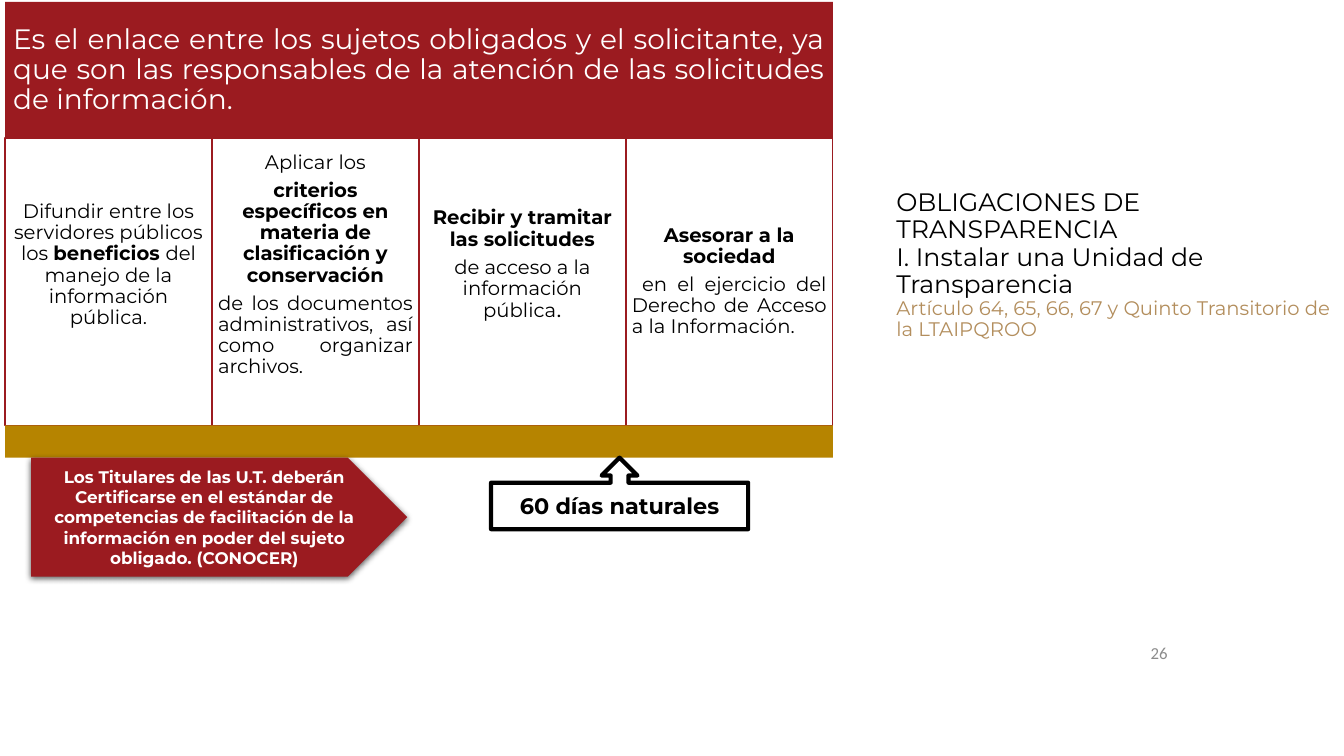
from lxml import etree
from pptx import Presentation
from pptx.dml.color import RGBColor
from pptx.enum.shapes import MSO_SHAPE as Kind
from pptx.enum.text import MSO_ANCHOR as Anchor, MSO_AUTO_SIZE as Fit, PP_ALIGN as Align
from pptx.oxml.ns import qn
from pptx.util import Inches, Pt

RED, GOLD, TAN = "9B1B20", "B68400", "B38E5D"
WHITE, BLACK, GRAY = "FFFFFF", "000000", "8C8C8C"
LEFT, WIDTH = 0.05, 8.21
MID, JUST = Align.CENTER, Align.JUSTIFY

DUTIES = [
    [(MID, [("Difundir entre los servidores públicos los ", {}),
            ("beneficios ", {"bold": True}),
            ("del manejo de la información pública.", {})])],
    [(MID, [("Aplicar los", {})]),
     (MID, [("criterios específicos en materia de clasificación y conservación",
             {"bold": True})]),
     (JUST, [("de los documentos administrativos, así como organizar archivos.", {})])],
    [(MID, [("Recibir y tramitar las solicitudes", {"bold": True})]),
     (MID, [("de acceso a la información pública", {}),
            (".", {"size": 15, "face": "Calibri"})])],
    [(MID, [("Asesorar a la sociedad", {"bold": True})]),
     (JUST, [(" en el ejercicio del Derecho de Acceso a la Información.", {})])],
]


def tint(color):
    return RGBColor.from_string(color)


def style(font, size=14, face="Montserrat", color=BLACK, bold=False):
    font.size, font.name, font.bold = Pt(size), face, bold
    font.color.rgb = tint(color)


def write(shape, paras, inset=(0.1, 0.05, 0.1, 0.05), lines=1.0, gap=0, **look):
    frame = shape.text_frame
    frame.auto_size = Fit.NONE
    frame.word_wrap = True
    frame.vertical_anchor = Anchor.MIDDLE
    (frame.margin_left, frame.margin_top,
     frame.margin_right, frame.margin_bottom) = map(Inches, inset)
    for i, (align, runs) in enumerate(paras):
        para = frame.add_paragraph() if i else frame.paragraphs[0]
        para.alignment, para.line_spacing = align, lines
        para.space_before = Pt(0)
        para.space_after = Pt(gap if i < len(paras) - 1 else 0)
        for text, extra in runs:
            for j, part in enumerate(text.split("\n")):
                if j:
                    para.add_line_break()
                if part:
                    run = para.add_run()
                    run.text = part
                    style(run.font, **{**look, **extra})


def block(slide, box, fill, kind=Kind.RECTANGLE, line=None, width=1):
    shape = slide.shapes.add_shape(kind, *map(Inches, box))
    shape.shadow.inherit = False
    shape.fill.solid()
    shape.fill.fore_color.rgb = tint(fill)
    if line:
        shape.line.color.rgb = tint(line)
        shape.line.width = Pt(width)
    else:
        shape.line.fill.background()
    return shape


def shade(shape):
    effect = shape._element.spPr.find(qn("a:effectLst"))
    outer = etree.SubElement(effect, qn("a:outerShdw"), blurRad=str(Pt(4.5)),
                             dist=str(Pt(1.5)), dir="5400000", rotWithShape="0")
    color = etree.SubElement(outer, qn("a:srgbClr"), val=BLACK)
    etree.SubElement(color, qn("a:alpha"), val="63000")


def head(slide):
    title = slide.shapes.title
    title.left, title.top, title.width, title.height = map(
        Inches, (8.79, 2.21, 4.54, 0.85))
    write(title, [(Align.LEFT, [
        ("OBLIGACIONES DE TRANSPARENCIA\nI. Instalar una Unidad de Transparencia\n", {}),
        ("Artículo 64, 65, 66, 67 y Quinto Transitorio de la LTAIPQROO",
         {"size": 14, "color": TAN})])],
        inset=(0.1, 0.05, 0, 0.05), lines=0.9, size=18)


def panel(slide):
    banner = block(slide, (LEFT, 0.02, WIDTH, 1.36), RED)
    write(banner, [(JUST, [(
        "Es el enlace entre los sujetos obligados y el solicitante, ya que son "
        "las responsables de la atención de las solicitudes de información.", {})])],
        inset=(0.08,) * 4, lines=0.9, size=20, color=WHITE)
    step = WIDTH / len(DUTIES)
    for i, paras in enumerate(DUTIES):
        cell = block(slide, (LEFT + i * step, 1.37, step, 2.85), WHITE, line=RED)
        foot = 0.06 if i == len(DUTIES) - 1 else 0.39
        write(cell, paras, inset=(0.06, 0.06, 0.06, foot), lines=0.9, gap=5)
    block(slide, (LEFT, 4.22, WIDTH, 0.32), GOLD)


def notes(slide):
    arrow = block(slide, (0.31, 4.54, 3.73, 1.18), RED, Kind.PENTAGON)
    shade(arrow)
    write(arrow, [(MID, [(
        "Los Titulares de las U.T. deberán Certificarse en el estándar de "
        "competencias de facilitación de la información en poder del sujeto "
        "obligado. (CONOCER)", {})])], size=12, color=WHITE, bold=True)
    term = block(slide, (4.87, 4.54, 2.55, 0.71), WHITE,
                 Kind.UP_ARROW_CALLOUT, BLACK, 3)
    write(term, [(MID, [("60 días naturales", {})])], size=16, bold=True)
    page = slide.shapes.add_textbox(*map(Inches, (8.68, 6.28, 3, 0.4)))
    write(page, [(Align.RIGHT, [("26", {})])], size=12, face="Calibri", color=GRAY)


def main():
    deck = Presentation()
    deck.slide_width, deck.slide_height = Inches(13.33), Inches(7.5)
    slide = deck.slides.add_slide(deck.slide_layouts[5])
    head(slide)
    panel(slide)
    notes(slide)
    deck.save("out.pptx")


if __name__ == "__main__":
    main()
